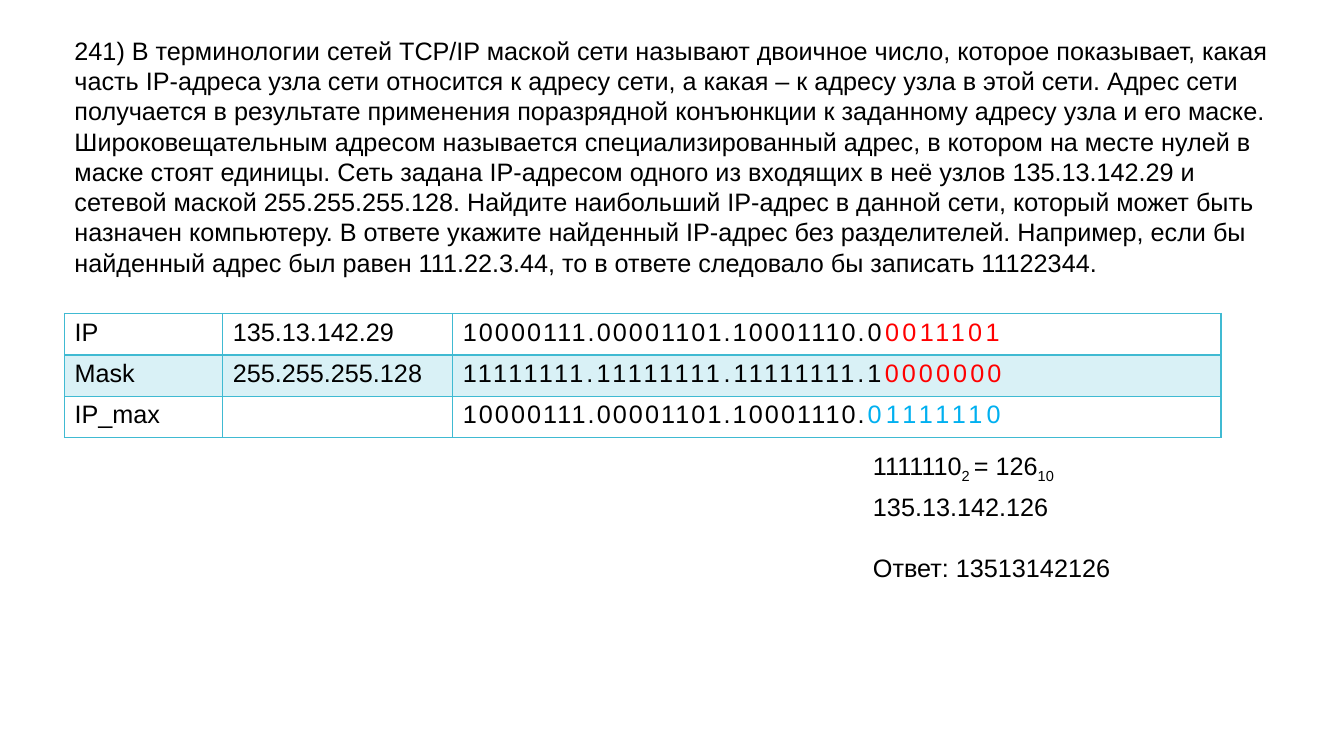
"""Build a slide that solves a network mask exercise."""
from lxml import etree
from pptx import Presentation
from pptx import util as u
from pptx.dml.color import RGBColor
from pptx.enum import text
from pptx.oxml.ns import qn

BLACK, RED, BLUE = "000000", "FF0000", "00B0F0"
TEAL, PALE_TEAL, WHITE = "40BAD2", "D9F1F6", "FFFFFF"
TASK = (
    "241) В терминологии сетей TCP/IP маской сети называют двоичное число, которое "
    "показывает, какая часть IP-адреса узла сети относится к адресу сети, а какая – "
    "к адресу узла в этой сети. Адрес сети получается в результате применения "
    "поразрядной конъюнкции к заданному адресу узла и его маске. Широковещательным "
    "адресом называется специализированный адрес, в котором на месте нулей в маске "
    "стоят единицы. Сеть задана IP-адресом одного из входящих в неё узлов "
    "135.13.142.29 и сетевой маской 255.255.255.128. Найдите наибольший IP-адрес в "
    "данной сети, который может быть назначен компьютеру. В ответе укажите найденный "
    "IP-адрес без разделителей. Например, если бы найденный адрес был равен "
    "111.22.3.44, то в ответе следовало бы записать 11122344."
)


def color(value):
    """Turn a hex string into a colour."""
    return RGBColor.from_string(value)


def add_span(para, words, tint=BLACK, spacing=0, baseline=0):
    """Add a run with its colour, letter spacing in points and baseline shift in percent."""
    span = para.add_run()
    span.text = words
    span.font.name = "Arial"
    span.font.size = u.Pt(18)
    span.font.color.rgb = color(tint)
    properties = span.font._element
    if spacing:
        properties.set("spc", str(round(spacing * 100)))
    if baseline:
        properties.set("baseline", str(baseline * 1000))


def add_text(page, left, top, width, height, paragraphs, wrap=False, gap=0):
    """Add a text box; each paragraph is a list of (words, format) spans."""
    box = page.shapes.add_textbox(*map(u.Inches, (left, top, width, height)))
    frame = box.text_frame
    frame.word_wrap = wrap
    frame.auto_size = text.MSO_AUTO_SIZE.SHAPE_TO_FIT_TEXT
    for index, spans in enumerate(paragraphs):
        para = frame.add_paragraph() if index else frame.paragraphs[0]
        if index:
            para.space_before = u.Pt(gap)
        for words, style in spans:
            add_span(para, words, **style)


def set_border(cell, side, width):
    """Draw one side of a cell as a teal line."""
    line = etree.SubElement(cell._tc.get_or_add_tcPr(), qn(f"a:ln{side}"), w=str(u.Pt(width)))
    fill = etree.SubElement(line, qn("a:solidFill"))
    etree.SubElement(fill, qn("a:srgbClr"), val=TEAL)


def add_grid(page, left, top, widths, row_height, rows):
    """Add a banded table with a heavier line below its first row."""
    frame = page.shapes.add_table(
        len(rows), len(widths), u.Inches(left), u.Inches(top),
        u.Inches(sum(widths)), u.Inches(row_height * len(rows)))
    table = frame.table
    table.first_row = table.horz_banding = False
    for column, width in zip(table.columns, widths):
        column.width = u.Inches(width)
    for row_index, row in enumerate(rows):
        table.rows[row_index].height = u.Inches(row_height)
        for column_index, spans in enumerate(row):
            cell = table.cell(row_index, column_index)
            for side in "LRTB":
                heavy = (row_index, side) in ((0, "B"), (1, "T"))
                set_border(cell, side, 2 if heavy else 1)
            cell.fill.solid()
            cell.fill.fore_color.rgb = color(PALE_TEAL if row_index % 2 else WHITE)
            for words, style in spans:
                add_span(cell.text_frame.paragraphs[0], words, **style)


def main():
    """Build and save the slide."""
    deck = Presentation()
    deck.slide_width, deck.slide_height = u.Inches(13.33), u.Inches(7.5)
    page = deck.slides.add_slide(deck.slide_layouts[6])

    add_text(page, 0.64, 0.3, 12.08, 2.52, [[(TASK, {})]], wrap=True)

    network = ("10000111.00001101.10001110.", {"spacing": 1.5})
    address_bits = [network, ("0", {"spacing": 2.4}),
                    ("0011101", {"spacing": 2.4, "tint": RED})]
    mask_bits = [("11111111.", {"spacing": 2.2}), ("11111111", {"spacing": 2.5}),
                 (".11111111.1", {"spacing": 2.2}),
                 ("0000000", {"spacing": 2.2, "tint": RED})]
    largest_bits = [network, ("01111110", {"spacing": 3.1, "tint": BLUE})]
    add_grid(page, 0.64, 3.11, [1.57, 2.28, 7.62], 0.41, [
        [[("IP", {})], [("135.13.142.29", {})], address_bits],
        [[("Mask", {})], [("255.255.255.128", {})], mask_bits],
        [[("IP_max", {})], [], largest_bits],
    ])

    subscript = {"baseline": -25}
    add_text(page, 8.56, 4.42, 2.05, 0.4, [
        [("1111110", {}), ("2 ", subscript), ("= 126", {}), ("10", subscript)]])
    add_text(page, 8.56, 4.82, 2.58, 1.01, [
        [("135.13.142.126", {})], [("Ответ: 13513142126", {})]], gap=22)

    deck.save("out.pptx")


if __name__ == "__main__":
    main()
